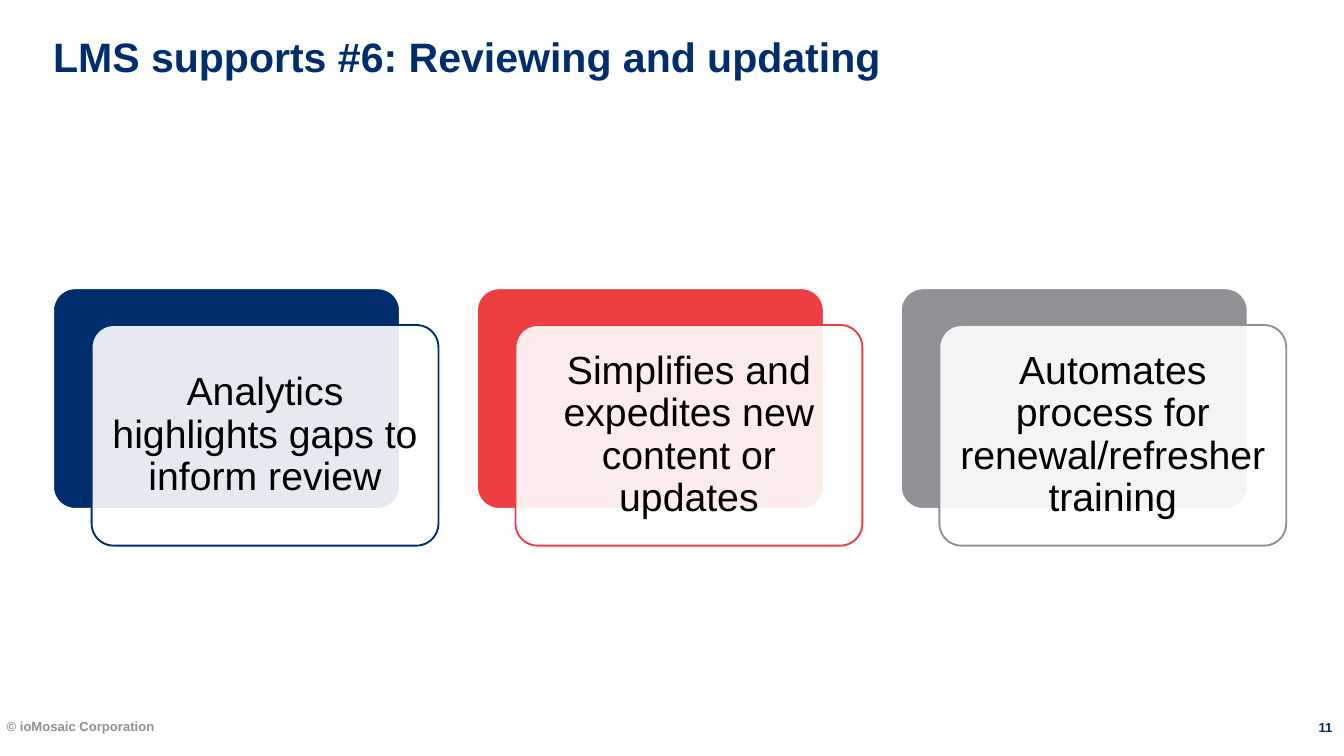
from lxml import etree
from pptx import Presentation
from pptx.dml.color import RGBColor
from pptx.enum.shapes import MSO_SHAPE
from pptx.enum.text import MSO_ANCHOR, PP_ALIGN
from pptx.oxml.ns import qn
from pptx.util import Inches, Pt

ROUND = MSO_SHAPE.ROUNDED_RECTANGLE
TOP, MIDDLE = MSO_ANCHOR.TOP, MSO_ANCHOR.MIDDLE
LEFT, CENTER = PP_ALIGN.LEFT, PP_ALIGN.CENTER

NAVY = RGBColor(0x00, 0x2E, 0x6D)
RED = RGBColor(0xEF, 0x3E, 0x42)
GRAY = RGBColor(0x91, 0x91, 0x95)
WHITE = RGBColor(0xFF, 0xFF, 0xFF)
BLACK = RGBColor(0x00, 0x00, 0x00)

WIDE, HIGH = 20, 11.25
MARGIN = 0.79
SPAN = 18.35
SHIFT = 0.1

CARDS = [
    ("Analytics highlights gaps to inform review", NAVY),
    ("Simplifies and expedites new content or updates", RED),
    ("Automates process for renewal/refresher training", GRAY),
]


def inch(box):
    return [Inches(side) for side in box]


def write(shape, text, size, color, bold=False, align=LEFT, anchor=TOP,
          pad=(0, 0, 0, 0), after=0, lines=1.0):
    frame = shape.text_frame
    frame.word_wrap = True
    frame.vertical_anchor = anchor
    (frame.margin_left, frame.margin_top,
     frame.margin_right, frame.margin_bottom) = inch(pad)
    para = frame.paragraphs[0]
    para.alignment = align
    para.space_after = Pt(after)
    para.line_spacing = lines
    run = para.add_run()
    run.text = text
    font = run.font
    font.name, font.size, font.bold = "Arial", Pt(size), bold
    font.color.rgb = color


def add_panel(slide, box, fill, line, alpha=100):
    panel = slide.shapes.add_shape(ROUND, *inch(box))
    panel.adjustments[0] = 0.1
    panel.shadow.inherit = False
    panel.fill.solid()
    panel.fill.fore_color.rgb = fill
    panel.line.color.rgb = line
    panel.line.width = Pt(2)
    if alpha < 100:
        tint = panel.fill._xPr.find(qn("a:solidFill"))[0]
        etree.SubElement(tint, qn("a:alpha")).set("val", str(alpha * 1000))
    return panel


def add_card(slide, box, text, color):
    left, top, width, height = box
    right, down = width * SHIFT, height / 7
    size = (width - right, height - down)
    add_panel(slide, (left, top, *size), color, WHITE)
    front = add_panel(slide, (left + right, top + down, *size),
                      WHITE, color, alpha=90)
    write(front, text, 42, BLACK, align=CENTER, anchor=MIDDLE,
          pad=(0.17,) * 4, lines=0.9)


def add_cards(slide, box):
    left, top, span, height = box
    count = len(CARDS)
    width = span / (count + SHIFT * (count - 1))
    step = width * (1 + SHIFT)
    for index, (text, color) in enumerate(CARDS):
        add_card(slide, (left + index * step, top, width, height), text, color)


def add_title(slide, box):
    title = slide.shapes.title
    title.left, title.top, title.width, title.height = inch(box)
    write(title, "LMS supports #6: Reviewing and updating", 44, NAVY,
          bold=True, pad=(0, 0, 0.1, 0))


def add_footer(slide, box):
    left, top, width, height = box
    note = slide.shapes.add_textbox(*inch((left, top, width * 2 / 3, height)))
    write(note, "© ioMosaic Corporation", 14, GRAY, bold=True,
          pad=(0.1, 0.05, 0.1, 0.05), after=6)
    cell = 0.55
    page = slide.shapes.add_textbox(
        *inch((left + width - cell, top + height * 0.1, cell, height * 0.75)))
    write(page, "11", 14, NAVY, bold=True, align=CENTER, after=6)


def main():
    deck = Presentation()
    deck.slide_width, deck.slide_height = inch((WIDE, HIGH))
    slide = deck.slides.add_slide(deck.slide_layouts[5])
    add_title(slide, (MARGIN, 0.47, SPAN, 1.51))
    add_footer(slide, (0, 10.64, WIDE, 0.6))
    add_cards(slide, (MARGIN, 4.29, SPAN, 3.83))
    deck.save("out.pptx")


if __name__ == "__main__":
    main()
